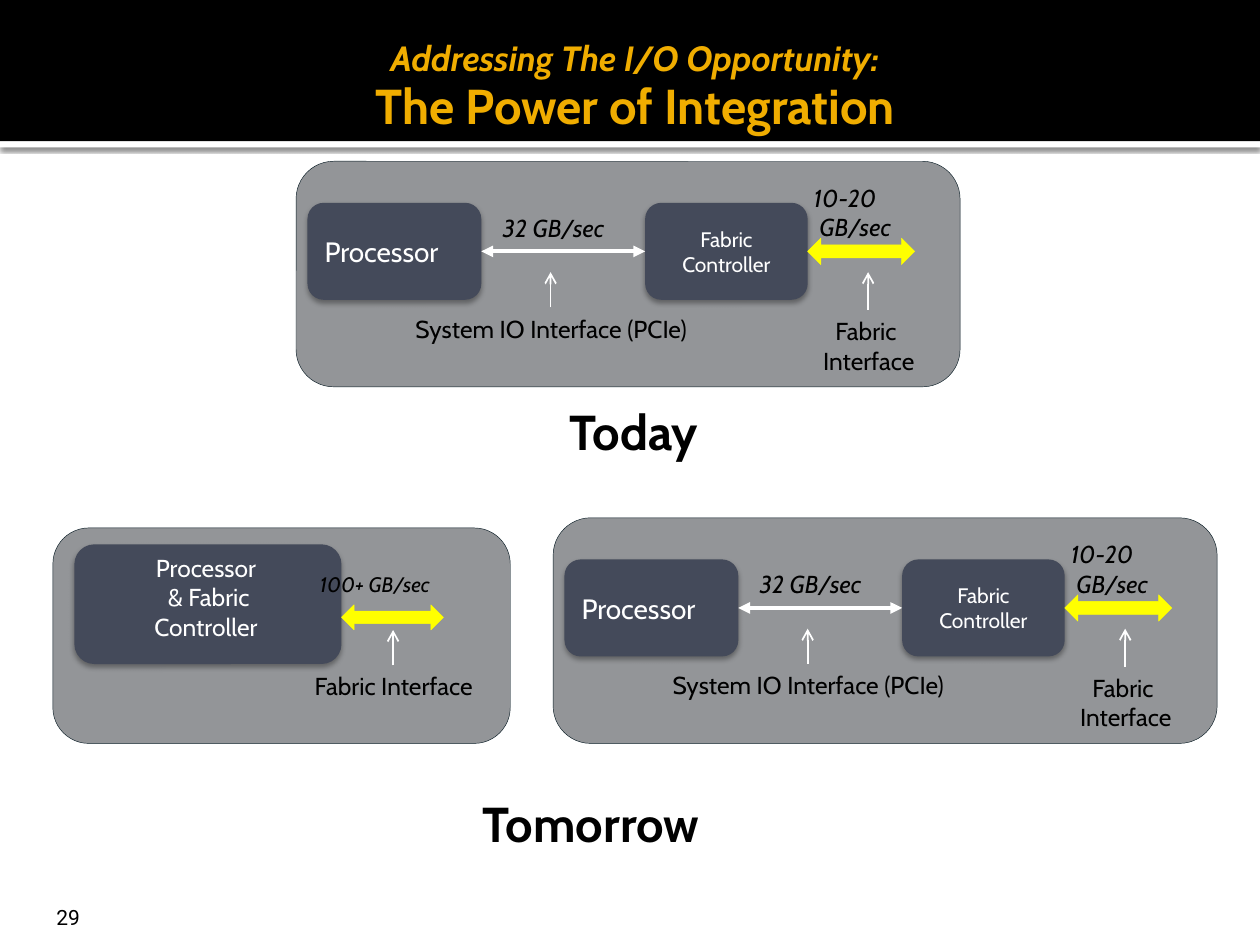
from dataclasses import dataclass

from lxml.etree import SubElement as Sub
from pptx import Presentation
from pptx.dml.color import RGBColor as Rgb
from pptx.enum.shapes import MSO_CONNECTOR as Conn, MSO_SHAPE as Form
from pptx.enum.text import MSO_ANCHOR as Anchor, MSO_AUTO_SIZE as Auto, PP_ALIGN as Align
from pptx.oxml.ns import qn
from pptx.util import Pt

PX = 9144  # 100 px to the inch


@dataclass(frozen=True)
class Theme:
    font: str = "Cabin"
    digit: str = "Roboto"
    black: str = "000000"
    white: str = "FFFFFF"
    gold: str = "F0AD00"
    panel: str = "939598"
    edge: str = "061922"
    chip: str = "444A5A"
    yellow: str = "FFFF00"
    small: int = 12
    body: int = 14
    large: int = 16
    sub: int = 20
    head: int = 28


T = Theme()


def emu(*nums):
    return [n * PX for n in nums]


def write(frame, paras, size, color=T.black, align=Align.LEFT, font=T.font,
          bold=False, italic=False):
    """Fill a frame; a paragraph is a list of lines parted by breaks."""
    for i, lines in enumerate(paras):
        para = frame.paragraphs[0] if i == 0 else frame.add_paragraph()
        para.alignment = align
        for j, line in enumerate(lines):
            if j:
                para.add_line_break()
            style(para.add_run(), line, size, color, font, bold, italic)


def style(run, text, size, color, font=T.font, bold=False, italic=False):
    run.text = text
    face = run.font
    face.name, face.size = font, Pt(size)
    face.bold, face.italic = bold, italic
    face.color.rgb = Rgb.from_string(color)


def label(slide, box, paras, size=T.body, wrap=True, **look):
    frame = slide.shapes.add_textbox(*emu(*box)).text_frame
    frame.word_wrap = wrap
    write(frame, paras, size, **look)


def block(slide, form, box, fill, edge=None):
    shape = slide.shapes.add_shape(form, *emu(*box))
    shape.shadow.inherit = False
    shape.fill.solid()
    shape.fill.fore_color.rgb = Rgb.from_string(fill)
    if edge:
        shape.line.color.rgb = Rgb.from_string(edge)
        shape.line.width = Pt(0.25)
    else:
        shape.line.fill.background()
    return shape


def shade(shape, alpha, blur, dist):
    glow = shape.element.spPr.find(qn("a:effectLst"))
    cast = Sub(glow, qn("a:outerShdw"), blurRad=str(Pt(blur)), dist=str(Pt(dist)),
               dir="5400000", algn="ctr", rotWithShape="0")
    tint = Sub(cast, qn("a:srgbClr"), val=T.black)
    Sub(tint, qn("a:alpha"), val=str(alpha * 1000))


def panel(slide, box):
    block(slide, Form.ROUNDED_RECTANGLE, box, T.panel, T.edge)


def chip(slide, box):
    shape = block(slide, Form.ROUNDED_RECTANGLE, box, T.chip)
    shade(shape, 35, 3.1, 1.8)
    frame = shape.text_frame
    frame.word_wrap = False
    frame.vertical_anchor = Anchor.MIDDLE
    return shape


def port(slide, box):
    block(slide, Form.LEFT_RIGHT_ARROW, box, T.yellow, T.yellow)


def wire(slide, ends, width, head=None, tail=None):
    line = slide.shapes.add_connector(Conn.STRAIGHT, *emu(*ends))
    line.line.color.rgb = Rgb.from_string(T.white)
    line.line.width = Pt(width)
    pen = line.line._get_or_add_ln()
    for tag, kind in (("a:headEnd", head), ("a:tailEnd", tail)):
        if kind:
            Sub(pen, qn(tag), type=kind)
    Sub(line.element.spPr, qn("a:effectLst"))
    return line


def point(slide, x, low, high):
    wire(slide, (x, low, x, high), 1, tail="arrow")


def header(slide):
    # Black band over a white strip with a soft shadow
    strip = block(slide, Form.RECTANGLE, (0, 112, 1000, 5), T.white)
    shade(strip, 60, 2.5, 0.8)
    band = block(slide, Form.RECTANGLE, (0, 0, 1000, 112), T.black)
    # Two-line title
    title = slide.shapes.title
    band.element.addnext(title.element)
    title.left, title.top, title.width, title.height = emu(28, 26, 947, 87)
    frame = title.text_frame
    frame.auto_size = Auto.NONE
    frame.vertical_anchor = Anchor.MIDDLE
    frame.margin_left, frame.margin_right = emu(10, 5)
    para = frame.paragraphs[0]
    para.alignment = Align.CENTER
    para.line_spacing = 0.95
    style(para.add_run(), "Addressing The I/O Opportunity:", T.sub, T.gold,
          bold=True, italic=True)
    para.add_line_break()
    style(para.add_run(), "The Power of Integration", T.head, T.gold, bold=True)


def split(slide, x, y):
    """Processor and fabric controller as two chips."""
    panel(slide, (x, y, 527, 179))
    # Chips and the link between them
    left = chip(slide, (x + 9, y + 33, 138, 77))
    write(left.text_frame, [["Processor"]], T.large, T.white)
    right = chip(slide, (x + 277, y + 33, 129, 77))
    write(right.text_frame, [["Fabric"], ["Controller"]], T.small, T.white, Align.CENTER)
    link = wire(slide, (x + 147, y + 72, x + 277, y + 72), 2.25, "triangle", "triangle")
    link.begin_connect(left, 3)
    link.end_connect(right, 1)
    # System interface
    label(slide, (x + 83, y + 116, 239, 57), [["System IO Interface (PCIe)"]],
          align=Align.CENTER)
    label(slide, (x + 154, y + 36, 211, 34), [["32 GB/sec"]], italic=True)
    point(slide, x + 202, y + 116, y + 88)
    # Fabric interface
    port(slide, (x + 406, y + 61, 85, 21))
    label(slide, (x + 357, y + 118, 195, 57), [["Fabric ", "Interface"]], align=Align.CENTER)
    point(slide, x + 454, y + 118, y + 88)
    label(slide, (x + 401, y + 12, 201, 57), [["10-20", " GB/sec"]], italic=True)


def joint(slide, x, y):
    """Processor and fabric controller on one chip."""
    panel(slide, (x, y, 363, 171))
    chip(slide, (x + 17, y + 13, 212, 95))
    label(slide, (x + 39, y + 15, 165, 81), [["Processor"], [" & Fabric Controller"]],
          color=T.white, align=Align.CENTER)
    # Fabric interface
    port(slide, (x + 229, y + 61, 81, 20))
    label(slide, (x + 178, y + 109, 185, 34), [["Fabric Interface"]], align=Align.CENTER)
    point(slide, x + 270, y + 109, y + 81)
    label(slide, (x + 202, y + 30, 201, 30), [["100+ GB/sec"]], T.small, italic=True)


def main():
    deck = Presentation()
    deck.slide_width, deck.slide_height = emu(1000, 750)
    slide = deck.slides.add_slide(deck.slide_layouts[5])
    header(slide)
    # Today
    split(slide, 235, 128)
    label(slide, (442, 314, 154, 57), [["Today"]], T.head, wrap=False, bold=True)
    # Tomorrow
    joint(slide, 42, 419)
    split(slide, 439, 411)
    label(slide, (373, 625, 248, 57), [["Tomorrow"]], T.head, wrap=False, bold=True)
    # Slide number
    label(slide, (35, 713, 90, 33), [["29"]], T.small, font=T.digit)
    deck.save("out.pptx")


if __name__ == "__main__":
    main()
